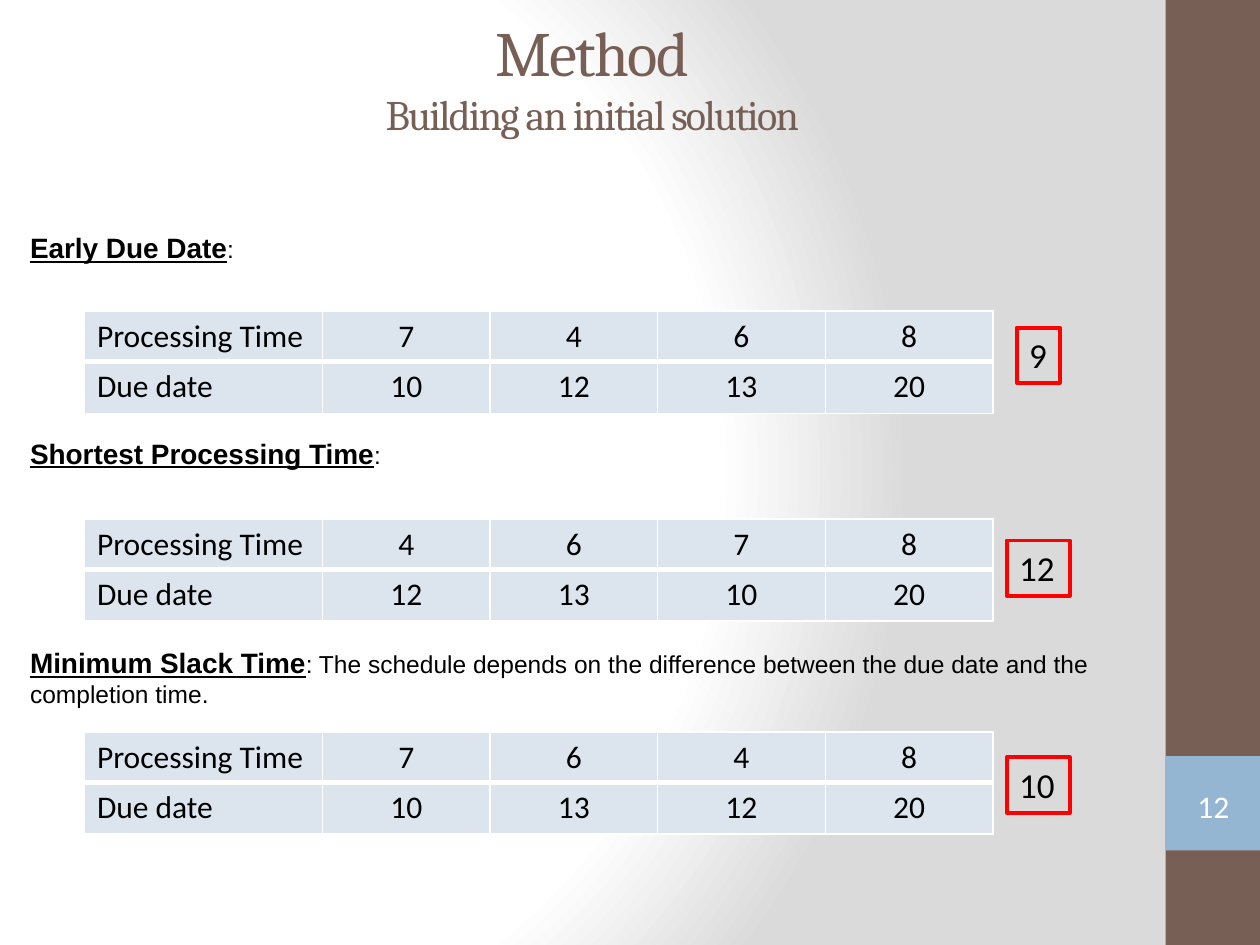
from typing import NamedTuple

from lxml.etree import SubElement
from pptx import Presentation
from pptx.dml.color import RGBColor
from pptx.enum.shapes import MSO_SHAPE
from pptx.enum.text import MSO_ANCHOR, PP_ALIGN
from pptx.oxml import parse_xml
from pptx.oxml.ns import nsdecls, qn
from pptx.util import Pt

PX = 9144  # 100 px to the inch

BROWN = RGBColor(0x77, 0x5F, 0x55)
BLUE = RGBColor(0x94, 0xB6, 0xD2)
PALE = RGBColor(0xDC, 0xE5, 0xEE)
RED = RGBColor(0xFF, 0, 0)
WHITE = RGBColor(0xFF, 0xFF, 0xFF)
BLACK = RGBColor(0, 0, 0)

COLS = (189, 133, 133, 133, 133)
ROWS = (40, 41)
EDGES = ("L", "R", "T", "B")


class Box(NamedTuple):
    x: int
    y: int
    w: int
    h: int

    def emu(self) -> list[int]:
        return [n * PX for n in self]


class Rule(NamedTuple):
    """A sequencing rule: heading, job table and resulting value."""
    name: str
    note: str
    head: Box
    top: int
    times: tuple
    dues: tuple
    value: str
    mark: Box


RULES = (
    Rule("Early Due Date", ":", Box(14, 178, 906, 37), 247,
         (7, 4, 6, 8), (10, 12, 13, 20), "9", Box(807, 260, 34, 44)),
    Rule("Shortest Processing Time", ":", Box(14, 341, 921, 37), 412,
         (4, 6, 7, 8), (12, 13, 10, 20), "12", Box(799, 429, 50, 44)),
    Rule("Minimum Slack Time",
         ": The schedule depends on the difference between the due date "
         "and the completion time.", Box(14, 507, 906, 61), 581,
         (7, 6, 4, 8), (10, 13, 12, 20), "10", Box(799, 601, 50, 44)),
)


def style(font, name: str, size: int, color: RGBColor) -> None:
    font.name, font.size = name, Pt(size)
    font.color.rgb = color


def paint(slide) -> None:
    """Give the slide its round white to grey background."""
    stops = "".join(
        f'<a:gs pos="{pos}"><a:srgbClr val="{hue}"/></a:gs>'
        for pos, hue in ((0, "FFFFFF"), (75000, "FFFFFF"), (100000, "DADADA")))
    slide.element.cSld.insert(0, parse_xml(
        f'<p:bg {nsdecls("p", "a")}><p:bgPr><a:gradFill rotWithShape="1">'
        f'<a:gsLst>{stops}</a:gsLst><a:path path="circle">'
        '<a:fillToRect l="20000" t="50000" r="100000" b="50000"/></a:path>'
        '</a:gradFill><a:effectLst/></p:bgPr></p:bg>'))


def add_shape(slide, kind: MSO_SHAPE, box: Box, fill: RGBColor | None = None,
              line: RGBColor | None = None):
    shape = slide.shapes.add_shape(kind, *box.emu())
    shape.shadow.inherit = False
    if fill is None:
        shape.fill.background()
    else:
        shape.fill.solid()
        shape.fill.fore_color.rgb = fill
    if line is None:
        shape.line.fill.background()
    else:
        shape.line.color.rgb = line
        shape.line.width = Pt(2.25)
    return shape


def add_text(slide, box: Box):
    """Add a wrapping, middle-anchored text box and return its paragraph."""
    frame = slide.shapes.add_textbox(*box.emu()).text_frame
    frame.word_wrap = True
    frame.vertical_anchor = MSO_ANCHOR.MIDDLE
    return frame.paragraphs[0]


def add_page(slide) -> None:
    shape = add_shape(slide, MSO_SHAPE.DOUBLE_BRACKET, Box(933, 618, 60, 43))
    frame = shape.text_frame
    frame.margin_left = frame.margin_right = 0
    frame.margin_top = frame.margin_bottom = 0
    para = frame.paragraphs[0]
    para.text = "12"
    para.alignment = PP_ALIGN.CENTER
    style(para.font, "Calibri", 18, WHITE)


def add_title(slide) -> None:
    para = add_text(slide, Box(-16, -2, 972, 125))
    para.alignment = PP_ALIGN.CENTER
    for text, size in (("Method", 36), ("Building an initial solution", 24)):
        if para.runs:
            para.add_line_break()
        run = para.add_run()
        run.text = text
        style(run.font, "Cambria", size, BROWN)
        run.font._element.set("spc", "-100")


def add_head(slide, rule: Rule) -> None:
    para = add_text(slide, rule.head)
    for text, size, strong in ((rule.name, 16, True), (rule.note, 14, False)):
        run = para.add_run()
        run.text = text
        style(run.font, "Arial", size, BLACK)
        run.font.bold = run.font.underline = strong


def set_edges(cell, widths: tuple) -> None:
    """Draw white borders; widths are points in the order of EDGES."""
    props = cell._tc.get_or_add_tcPr()
    for spot, (edge, width) in enumerate(zip(EDGES, widths)):
        line = props.makeelement(qn(f"a:ln{edge}"), {"w": str(Pt(width))})
        fill = SubElement(line, qn("a:solidFill"))
        SubElement(fill, qn("a:srgbClr"), val=str(WHITE))
        props.insert(spot, line)


def add_jobs(slide, rule: Rule) -> None:
    box = Box(67, rule.top, sum(COLS), sum(ROWS))
    table = slide.shapes.add_table(len(ROWS), len(COLS), *box.emu()).table
    table.first_row = table.horz_banding = False
    for col, width in zip(table.columns, COLS):
        col.width = width * PX
    for row, height in zip(table.rows, ROWS):
        row.height = height * PX
    data = (("Processing Time", *rule.times), ("Due date", *rule.dues))
    for r, line in enumerate(data):
        for c, value in enumerate(line):
            cell = table.cell(r, c)
            cell.fill.solid()
            cell.fill.fore_color.rgb = PALE
            set_edges(cell, (1, 1, 3, 1) if r else (1, 1, 1, 3))
            para = cell.text_frame.paragraphs[0]
            para.text = str(value)
            para.alignment = PP_ALIGN.CENTER if c else PP_ALIGN.LEFT
            style(para.font, "Calibri", 18, BLACK)


def add_mark(slide, rule: Rule) -> None:
    shape = add_shape(slide, MSO_SHAPE.RECTANGLE, rule.mark, line=RED)
    frame = shape.text_frame
    frame.word_wrap = False
    frame.vertical_anchor = MSO_ANCHOR.TOP
    para = frame.paragraphs[0]
    para.text = rule.value
    para.alignment = PP_ALIGN.LEFT
    style(para.font, "Calibri", 20, BLACK)


def main() -> None:
    deck = Presentation()
    deck.slide_width, deck.slide_height = 1000 * PX, 750 * PX
    slide = deck.slides.add_slide(deck.slide_layouts[6])
    paint(slide)
    add_shape(slide, MSO_SHAPE.RECTANGLE, Box(925, 0, 75, 750), BROWN)
    add_shape(slide, MSO_SHAPE.RECTANGLE, Box(925, 600, 75, 75), BLUE)
    add_page(slide)
    for part in (add_head, add_jobs, add_mark):
        for rule in RULES:
            part(slide, rule)
    add_title(slide)
    deck.save("out.pptx")


if __name__ == "__main__":
    main()
